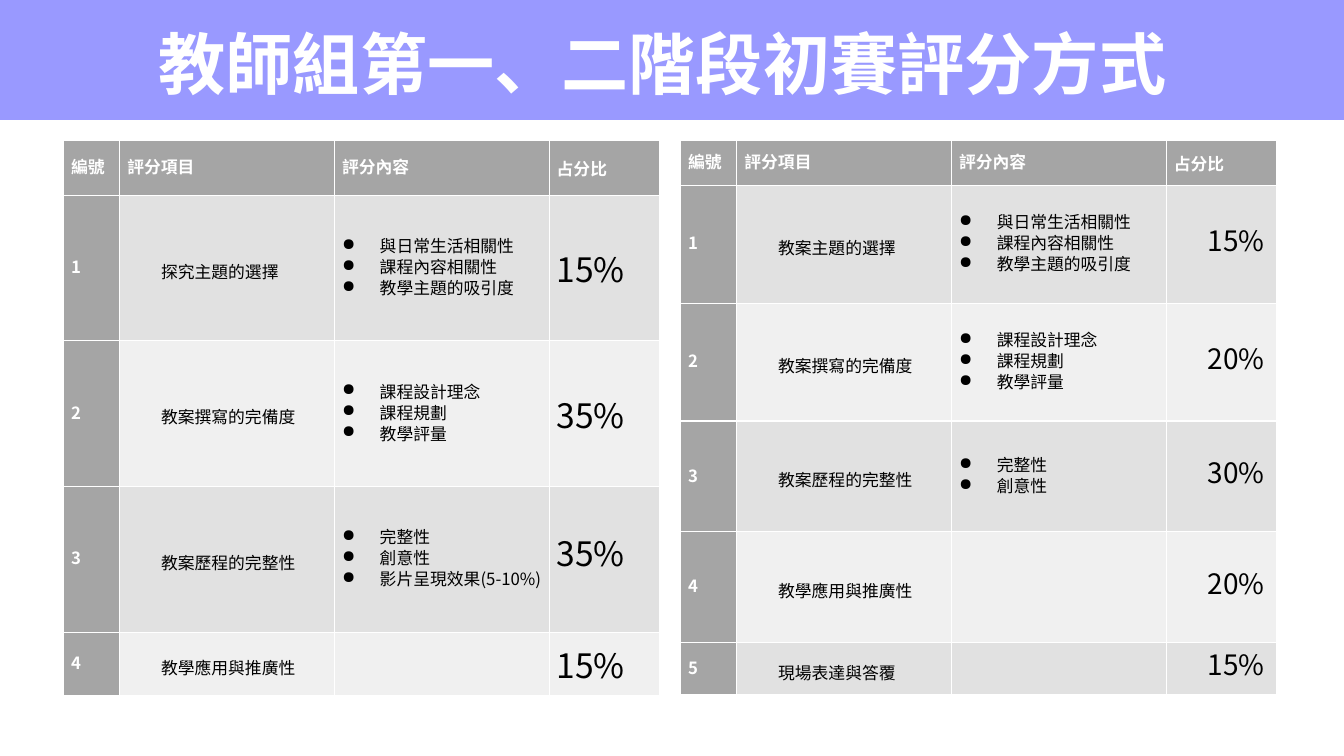
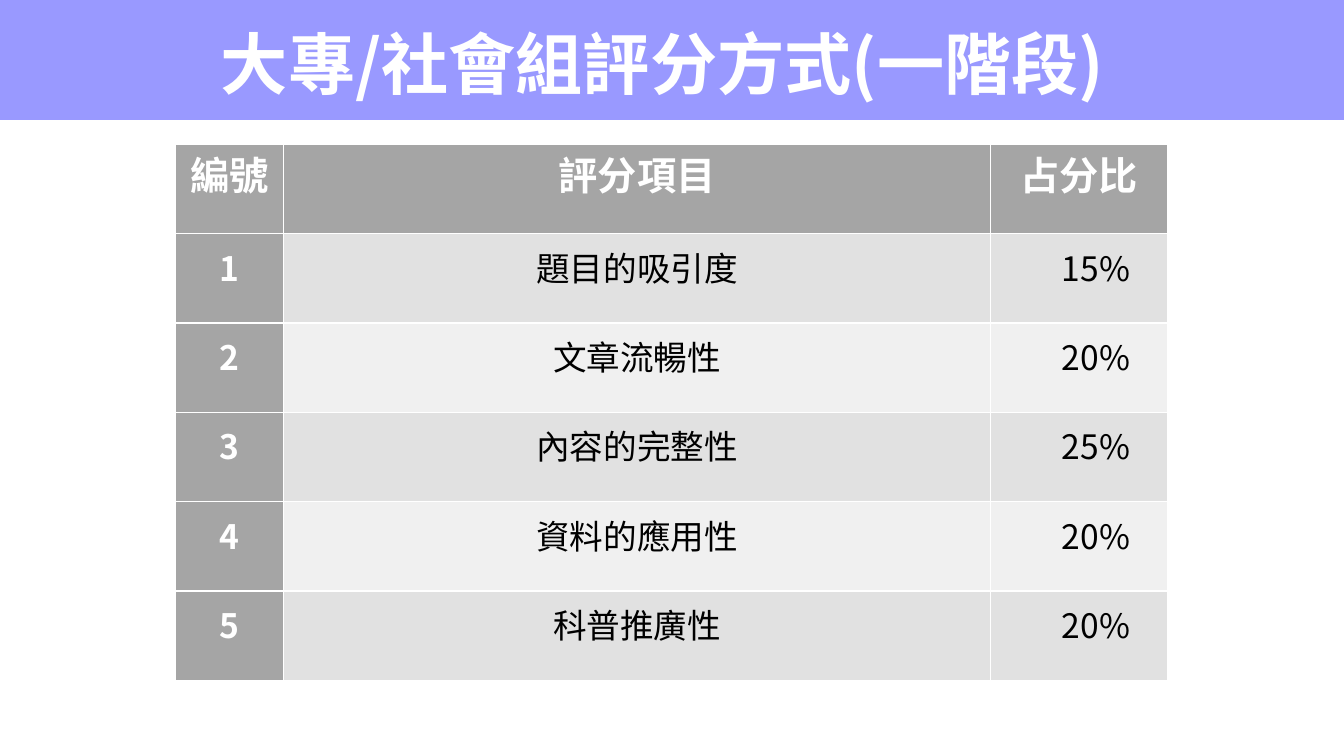
"""Build two slides of competition scoring tables under a shared title band."""
from dataclasses import dataclass, replace
from typing import Optional

from lxml.etree import SubElement
from pptx import Presentation
from pptx.dml.color import RGBColor
from pptx.enum.text import MSO_ANCHOR as Anchor, PP_ALIGN as Align
from pptx.oxml.ns import qn
from pptx.util import Cm, Pt

FONT = "Noto Sans CJK SC"
LAVENDER = RGBColor(0x99, 0x99, 0xFF)
WHITE = RGBColor(0xFF, 0xFF, 0xFF)
BLACK = RGBColor(0x00, 0x00, 0x00)
GRAY = RGBColor(0xA5, 0xA5, 0xA5)
BANDS = (RGBColor(0xE1, 0xE1, 0xE1), RGBColor(0xF0, 0xF0, 0xF0))

SLIDE_WIDTH, SLIDE_HEIGHT = Cm(33.87), Cm(19.05)
TITLE_ONLY = 5


@dataclass(frozen=True)
class TextStyle:
    """Paragraph look of one table column."""
    size: int
    spacing: Optional[int] = None
    indent: float = 0
    align: Align = Align.LEFT
    bullet: bool = False


LABEL = TextStyle(12, 15)
ITEM = TextStyle(12, 22, 0.85)
CRITERIA = TextStyle(12, 15, 0.95, bullet=True)
TEACHER_HEADER = [LABEL, LABEL, LABEL, TextStyle(12)]
TEACHER_COLUMNS = [1.42, 5.41, 5.41, 2.79]
TEACHER_TITLES = ["編號", "評分項目", "評分內容", "占分比"]

CENTERED = TextStyle(24, 18, align=Align.CENTER)
CENTERED_SCORE = replace(CENTERED, indent=0.85)
CENTERED_HEADER = replace(CENTERED, size=28)

TOPIC_CRITERIA = "與日常生活相關性\n課程內容相關性\n教學主題的吸引度"
PLAN_CRITERIA = "課程設計理念\n課程規劃\n教學評量"
PROCESS_CRITERIA = "完整性\n創意性"

FIRST_STAGE = [
    ("探究主題的選擇", TOPIC_CRITERIA, "15%"),
    ("教案撰寫的完備度", PLAN_CRITERIA, "35%"),
    ("教案歷程的完整性", PROCESS_CRITERIA + "\n影片呈現效果(5-10%)", "35%"),
    ("教學應用與推廣性", "", "15%"),
]
SECOND_STAGE = [
    ("教案主題的選擇", TOPIC_CRITERIA, "15%"),
    ("教案撰寫的完備度", PLAN_CRITERIA, "20%"),
    ("教案歷程的完整性", PROCESS_CRITERIA, "30%"),
    ("教學應用與推廣性", "", "20%"),
    ("現場表達與答覆", "", "15%"),
]
COLLEGE = [
    ("題目的吸引度", "15%"),
    ("文章流暢性", "20%"),
    ("內容的完整性", "25%"),
    ("資料的應用性", "20%"),
    ("科普推廣性", "20%"),
]


def set_font(paragraph, size, color, bold):
    """Set the Latin and East Asian font of a paragraph."""
    font = paragraph.font
    font.size, font.bold, font.name = Pt(size), bold, FONT
    font.color.rgb = color
    defaults = paragraph._p.get_or_add_pPr().find(qn("a:defRPr"))
    SubElement(defaults, qn("a:ea")).set("typeface", FONT)


def format_paragraph(paragraph, style, color, bold):
    """Apply a column style to a paragraph."""
    properties = paragraph._p.get_or_add_pPr()
    properties.set("marL", str(Cm(style.indent)))
    if style.bullet:
        properties.set("indent", str(-Cm(style.indent)))
        SubElement(properties, qn("a:buChar")).set("char", "●")
    paragraph.alignment = style.align
    if style.spacing:
        paragraph.line_spacing = Pt(style.spacing)
    set_font(paragraph, style.size, color, bold)


def fill_cell(cell, text, style, background, strong):
    """Write and format one table cell."""
    cell.fill.solid()
    cell.fill.fore_color.rgb = background
    cell.vertical_anchor = Anchor.MIDDLE
    cell.margin_left = cell.margin_right = Cm(0.19)
    cell.margin_top = cell.margin_bottom = 0
    cell.text = text
    for paragraph in cell.text_frame.paragraphs:
        format_paragraph(paragraph, style, WHITE if strong else BLACK, strong)


def add_score_table(slide, left, top, widths, heights, titles, rows, header_styles, body_styles):
    """Add a scoring table with numbered rows and return it."""
    frame = slide.shapes.add_table(len(heights), len(widths), Cm(left), Cm(top),
                                   Cm(sum(widths)), Cm(sum(heights)))
    table = frame.table
    table.first_col, table.horz_banding = True, False
    for column, width in zip(table.columns, widths):
        column.width = Cm(width)
    for row, height in zip(table.rows, heights):
        row.height = Cm(height)
    lines = [titles] + [(str(number), *row) for number, row in enumerate(rows, 1)]
    for row_index, line in enumerate(lines):
        styles = body_styles if row_index else header_styles
        for column_index, (text, style) in enumerate(zip(line, styles)):
            strong = row_index == 0 or column_index == 0
            background = GRAY if strong else BANDS[(row_index - 1) % 2]
            fill_cell(table.cell(row_index, column_index), text, style, background, strong)
    return table


def add_titled_slide(presentation, text):
    """Add a slide whose title fills the band across the top."""
    slide = presentation.slides.add_slide(presentation.slide_layouts[TITLE_ONLY])
    title = slide.shapes.title
    title.left, title.top, title.width, title.height = 0, 0, SLIDE_WIDTH, Cm(3.02)
    title.fill.solid()
    title.fill.fore_color.rgb = LAVENDER
    frame = title.text_frame
    frame.text = text
    frame.vertical_anchor = Anchor.MIDDLE
    frame.margin_left, frame.margin_right = Cm(0.25), Cm(0.73)
    frame.margin_top, frame.margin_bottom = Cm(0.28), Cm(0.13)
    paragraph = frame.paragraphs[0]
    paragraph.alignment = Align.CENTER
    set_font(paragraph, 48, WHITE, True)
    return slide


def add_teacher_slide(presentation):
    """Add the two teacher tables side by side."""
    slide = add_titled_slide(presentation, "教師組第一、二階段初賽評分方式")
    first = add_score_table(slide, 1.6, 3.53, TEACHER_COLUMNS, [1.4, 3.66, 3.66, 3.68, 1.6],
                            TEACHER_TITLES, FIRST_STAGE, TEACHER_HEADER,
                            [LABEL, ITEM, CRITERIA, TextStyle(24)])
    first.cell(3, 3).text_frame.paragraphs[0].line_spacing = Pt(25)
    add_score_table(slide, 17.15, 3.53, TEACHER_COLUMNS, [1.14, 2.97, 2.97, 2.79, 2.79, 1.32],
                    TEACHER_TITLES, SECOND_STAGE, TEACHER_HEADER,
                    [LABEL, ITEM, CRITERIA, replace(ITEM, size=20)])


def add_college_slide(presentation):
    """Add the college and public group table."""
    slide = add_titled_slide(presentation, "大專/社會組評分方式(一階段)")
    add_score_table(slide, 4.43, 3.64, [2.72, 17.81, 4.47], [2.25] * 6,
                    ["編號", "評分項目", "占分比"], COLLEGE, [CENTERED_HEADER] * 3,
                    [CENTERED, CENTERED, CENTERED_SCORE])


def main():
    """Build and save the presentation."""
    presentation = Presentation()
    presentation.slide_width, presentation.slide_height = SLIDE_WIDTH, SLIDE_HEIGHT
    add_teacher_slide(presentation)
    add_college_slide(presentation)
    presentation.save("out.pptx")


if __name__ == "__main__":
    main()
